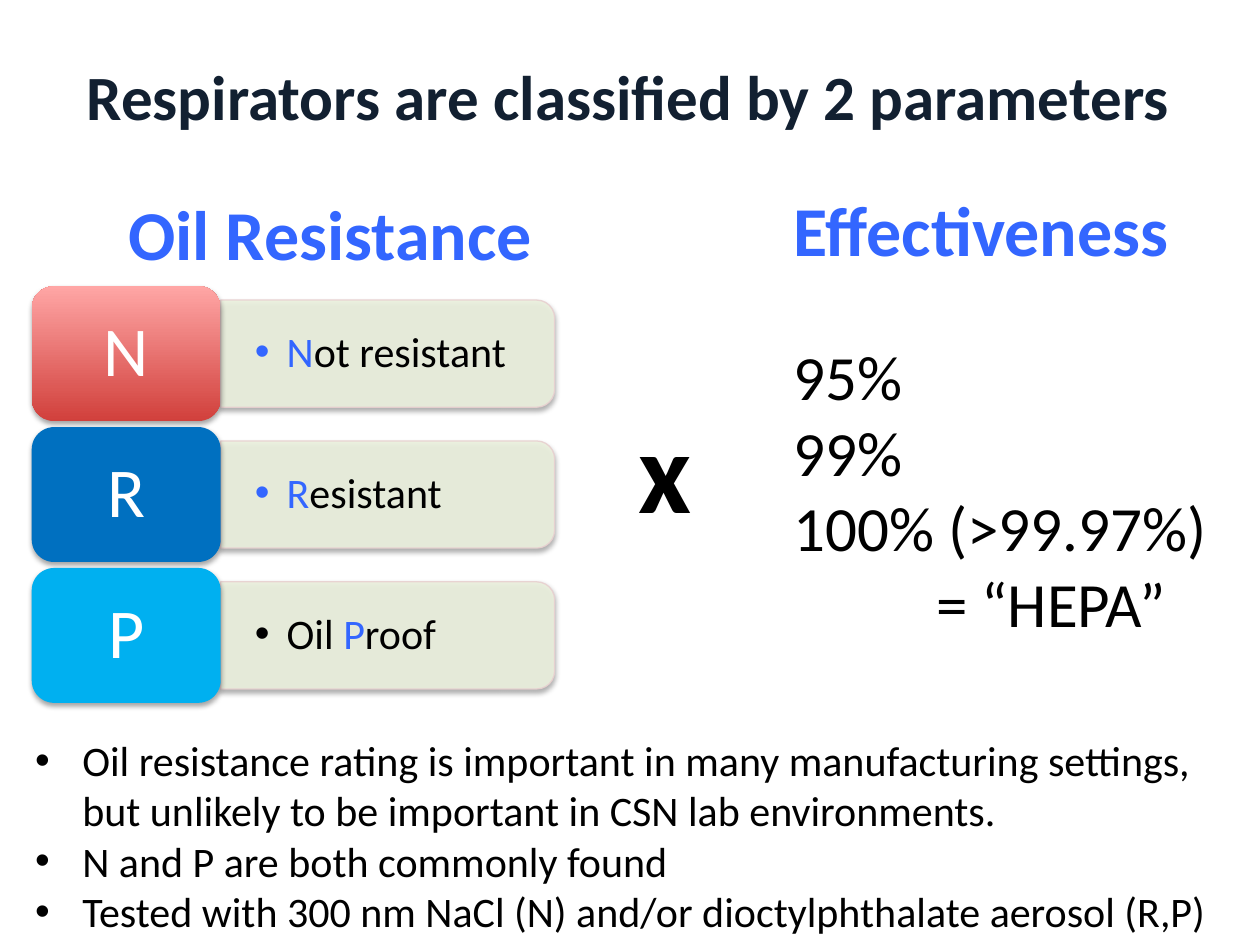
from lxml import etree
from pptx import Presentation
from pptx.dml.color import RGBColor
from pptx.enum.shapes import MSO_SHAPE
from pptx.enum.text import MSO_ANCHOR, MSO_AUTO_SIZE, PP_ALIGN
from pptx.oxml.ns import qn
from pptx.util import Cm, Pt

ROUNDED = MSO_SHAPE.ROUNDED_RECTANGLE
ROUNDED_TOP = MSO_SHAPE.ROUND_2_SAME_RECTANGLE
LEFT, CENTER = PP_ALIGN.LEFT, PP_ALIGN.CENTER
TOP, MIDDLE = MSO_ANCHOR.TOP, MSO_ANCHOR.MIDDLE
FIT_SHAPE = MSO_AUTO_SIZE.SHAPE_TO_FIT_TEXT

FONT = "Calibri"
NAVY = RGBColor(0x12, 0x20, 0x31)
ACCENT = RGBColor(0x33, 0x66, 0xFF)
BLACK = RGBColor(0, 0, 0)
WHITE = RGBColor(0xFF, 0xFF, 0xFF)
PANEL = RGBColor(0xEB, 0xF1, 0xDE)
PANEL_LINE = RGBColor(0xE8, 0xD0, 0xD0)
RED_DARK = RGBColor(0xD1, 0x40, 0x3C)
RED_LIGHT = RGBColor(0xFF, 0xA6, 0xA5)
BLUE = RGBColor(0x00, 0x70, 0xC0)
SKY = RGBColor(0x00, 0xB0, 0xF0)

RATINGS = [
    ("N", (RED_DARK, RED_LIGHT), [("N", ACCENT), ("ot resistant", BLACK)]),
    ("R", (BLUE,), [("R", ACCENT), ("esistant", BLACK)]),
    ("P", (SKY,), [("Oil ", BLACK), ("P", ACCENT), ("roof", BLACK)]),
]
NOTES = [
    "Oil resistance rating is important in many manufacturing settings, "
    "but unlikely to be important in CSN lab environments.",
    "N and P are both commonly found",
    "Tested with 300 nm NaCl (N) and/or dioctylphthalate aerosol (R,P)",
]


def set_indent(paragraph, left, bullet=False):
    """Indent a paragraph by a length in centimetres, optionally with a hanging bullet."""
    properties = paragraph._p.get_or_add_pPr()
    properties.set("marL", str(Cm(left)))
    if bullet:
        properties.set("indent", str(-Cm(left)))
        etree.SubElement(properties, qn("a:buFont"), typeface="Arial")
        etree.SubElement(properties, qn("a:buChar"), char="•")


def write_text(frame, paragraphs, size, color=BLACK, bold=False, align=LEFT,
               anchor=TOP, wrap=True, spacing=None, bullet_indent=0, margins=None):
    """Fill a text frame with paragraphs, each a string or a list of (text, colour) runs."""
    frame.word_wrap = wrap
    frame.vertical_anchor = anchor
    if margins:
        frame.margin_left = frame.margin_right = Cm(margins[0])
        frame.margin_top = frame.margin_bottom = Cm(margins[1])
    for index, content in enumerate(paragraphs):
        paragraph = frame.add_paragraph() if index else frame.paragraphs[0]
        if bullet_indent:
            set_indent(paragraph, bullet_indent, bullet=True)
        paragraph.alignment = align
        if spacing:
            paragraph.line_spacing = spacing
        runs = [(content, color)] if isinstance(content, str) else content
        for text, run_color in runs:
            run = paragraph.add_run()
            run.text = text
            run.font.name = FONT
            run.font.size = Pt(size)
            run.font.bold = bold
            run.font.color.rgb = run_color


def add_text(slide, box, paragraphs, size, fit=True, **text_format):
    """Add a text box at a box given in centimetres."""
    shape = slide.shapes.add_textbox(*map(Cm, box))
    write_text(shape.text_frame, paragraphs, size, **text_format)
    if fit:
        shape.text_frame.auto_size = FIT_SHAPE
    return shape


def add_shadow(shape):
    """Give a shape a soft shadow that falls straight down."""
    shape.shadow.inherit = False
    effects = shape._element.spPr.find(qn("a:effectLst"))
    shadow = etree.SubElement(effects, qn("a:outerShdw"), blurRad=str(Pt(3.1)),
                              dist=str(Pt(1.8)), dir="5400000", rotWithShape="0")
    color = etree.SubElement(shadow, qn("a:srgbClr"), val=str(BLACK))
    etree.SubElement(color, qn("a:alpha"), val="35000")


def add_panel(slide, box, runs):
    """Add the translucent panel that spells out one rating."""
    left, top, width, height = box
    shift = (width - height) / 2
    shape = slide.shapes.add_shape(ROUNDED_TOP, Cm(left + shift), Cm(top - shift),
                                   Cm(height), Cm(width))
    shape.rotation = 90
    shape.fill.solid()
    shape.fill.fore_color.rgb = PANEL
    shape.line.color.rgb = PANEL_LINE
    shape.line.width = Pt(0.75)
    for color in shape._element.spPr.iter(qn("a:srgbClr")):
        etree.SubElement(color, qn("a:alpha"), val="90000")
    add_shadow(shape)
    add_text(slide, (left, top + 0.1, width - 0.1, height - 0.2), [runs], 24, fit=False,
             anchor=MIDDLE, spacing=0.9, bullet_indent=0.64, margins=(0.69, 0.36))


def add_label(slide, box, letter, colors):
    """Add the rounded tile with the letter of one rating."""
    shape = slide.shapes.add_shape(ROUNDED, *map(Cm, box))
    if len(colors) > 1:
        shape.fill.gradient()
        shape.fill.gradient_angle = 90
        for stop, color in zip(shape.fill.gradient_stops, colors):
            stop.color.rgb = color
    else:
        shape.fill.solid()
        shape.fill.fore_color.rgb = colors[0]
    shape.line.fill.background()
    add_shadow(shape)
    write_text(shape.text_frame, [letter], 40, color=WHITE, align=CENTER,
               anchor=MIDDLE, spacing=0.9, margins=(0.56, 0.34))


def add_oil_resistance(slide, box):
    """Stack the rating rows under their heading."""
    left, top, width, height = box
    add_text(slide, (left + 1.7, top, 8.79, 1.96), ["Oil Resistance"], 40,
             color=ACCENT, bold=True, wrap=False)
    label_width, label_height, panel_height, first_row = 3.81, 2.72, 2.16, 2.06
    pitch = (height - first_row - label_height) / (len(RATINGS) - 1)
    for index, (letter, colors, runs) in enumerate(RATINGS):
        row = top + first_row + index * pitch
        inset = (label_height - panel_height) / 2
        add_panel(slide, (left + label_width, row + inset, width - label_width, panel_height),
                  runs)
        add_label(slide, (left, row, label_width, label_height), letter, colors)


def add_effectiveness(slide, box):
    """Place the efficiency levels under their heading."""
    left, top, width, height = box
    add_text(slide, (left, top, 8.23, 1.96), ["Effectiveness"], 40,
             color=ACCENT, bold=True, wrap=False)
    levels = add_text(slide, (left, top + 3.05, width, height - 3.05),
                      ["95%", "99%", "100% (>99.97%)", "= “HEPA”"], 36, wrap=False)
    set_indent(levels.text_frame.paragraphs[-1], 2.87)


def main():
    """Build and save the slide."""
    presentation = Presentation()
    presentation.slide_width, presentation.slide_height = Cm(25.4), Cm(19.05)
    slide = presentation.slides.add_slide(presentation.slide_layouts[6])
    add_text(slide, (0.64, 0.33, 24.05, 3.18), ["Respirators are classified by 2 parameters"],
             36, fit=False, color=NAVY, bold=True, align=CENTER, anchor=MIDDLE)
    add_oil_resistance(slide, (0.64, 3.71, 10.54, 10.46))
    add_text(slide, (12.62, 7.9, 1.6, 3.07), ["x"], 66, bold=True, wrap=False)
    add_effectiveness(slide, (15.75, 3.63, 8.92, 9.45))
    add_text(slide, (0.46, 14.68, 24.38, 4.37), NOTES, 24, bullet_indent=0.95)
    presentation.save("out.pptx")


if __name__ == "__main__":
    main()
